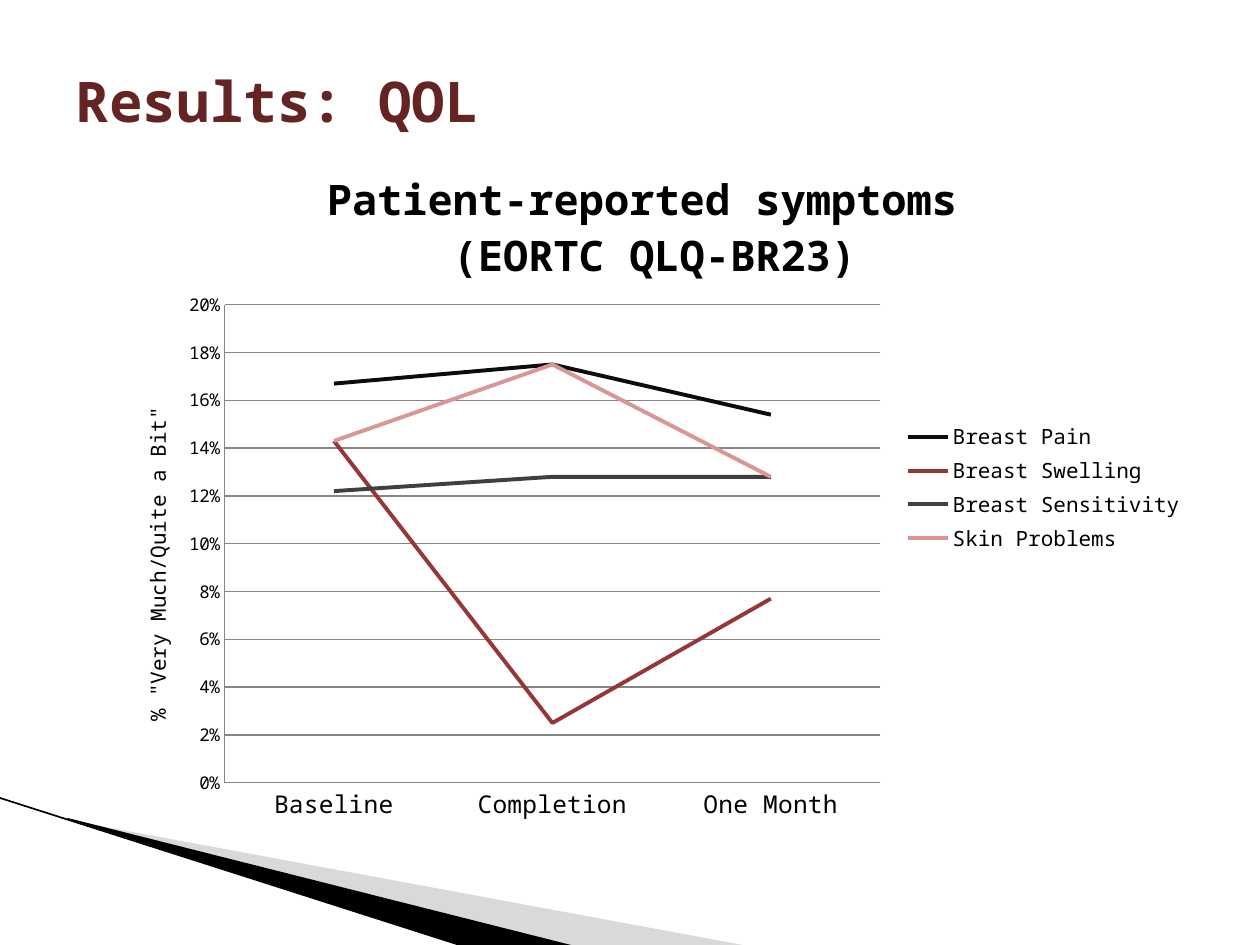
import dataclasses
import pptx
import pptx.chart.data
import pptx.dml.color
import pptx.enum.chart
import pptx.enum.shapes
import pptx.enum.text
import pptx.oxml.ns
import pptx.oxml.xmlchemy
import pptx.util

Inches = pptx.util.Inches
Pt = pptx.util.Pt
qn = pptx.oxml.ns.qn
make = pptx.oxml.xmlchemy.OxmlElement
FONT = "Noto Sans Mono"


@dataclasses.dataclass
class Wedge:
    points: list[tuple[float, float]]
    color: str
    alpha: int = 100


@dataclasses.dataclass
class Trend:
    name: str
    color: str
    vals: tuple[float, ...]


WEDGES = [
    Wedge([(0.55, 6.51), (5.95, 7.51), (4.56, 7.51), (0.55, 6.5)], "A2A2A2", 40),
    Wedge([(0.53, 6.49), (4.57, 7.51), (3.72, 7.52), (0.54, 6.5)], "000000"),
]
CATS = ["Baseline", "Completion", "One Month"]
TRENDS = [
    Trend("Breast Pain", "0C0C0C", (0.167, 0.175, 0.154)),
    Trend("Breast Swelling", "953734", (0.143, 0.025, 0.077)),
    Trend("Breast Sensitivity", "3F3F3F", (0.122, 0.128, 0.128)),
    Trend("Skin Problems", "D99694", (0.143, 0.175, 0.128)),
]


def rgb(code: str):
    return pptx.dml.color.RGBColor.from_string(code)


def style(font, size: float, color: str = "000000", bold: bool = False) -> None:
    for key, val in {"name": FONT, "size": Pt(size), "bold": bold}.items():
        setattr(font, key, val)
    font.color.rgb = rgb(color)


def stroke(line, color: str, width: float) -> None:
    line.color.rgb = rgb(color)
    line.width = Pt(width)


def draw_wedge(slide, wedge: Wedge) -> None:
    first, *rest = [(Inches(x), Inches(y)) for x, y in wedge.points]
    pen = slide.shapes.build_freeform(*first)
    pen.add_line_segments(rest, close=True)
    shape = pen.convert_to_shape()
    shape.shadow.inherit = False
    shape.fill.solid()
    shape.fill.fore_color.rgb = rgb(wedge.color)
    shape.line.fill.background()
    if wedge.alpha < 100:
        tint = shape._element.spPr.find(".//" + qn("a:srgbClr"))
        alpha = make("a:alpha")
        alpha.set("val", str(wedge.alpha * 1000))
        tint.append(alpha)


def place(owner, **spots: float) -> None:
    """Set a manual layout, in fractions of the chart, on a chart part."""
    for old in owner.findall(qn("c:layout")):
        owner.remove(old)
    layout = make("c:layout")
    manual = make("c:manualLayout")
    layout.append(manual)
    items = [("xMode", "edge"), ("yMode", "edge"), *spots.items()]
    if "w" in spots:
        items.insert(0, ("layoutTarget", "inner"))
    for tag, val in items:
        node = make("c:" + tag)
        node.set("val", str(val))
        manual.append(node)
    owner.insert(0 if owner.find(qn("c:tx")) is None else 1, layout)


def write(title, lines: list[str], size: float, bold: bool) -> None:
    frame = title.text_frame
    for i, text in enumerate(lines):
        para = frame.add_paragraph() if i else frame.paragraphs[0]
        run = para.add_run()
        run.text = text
        style(run.font, size, bold=bold)


def draw_chart(slide) -> None:
    data = pptx.chart.data.CategoryChartData(number_format="0.0%")
    data.categories = CATS
    for trend in TRENDS:
        data.add_series(trend.name, trend.vals)
    chart = slide.shapes.add_chart(
        pptx.enum.chart.XL_CHART_TYPE.LINE, Inches(0.83), Inches(1.08),
        Inches(8.67), Inches(5.58), data).chart
    style(chart.font, 10)

    # Heading and legend
    chart.has_title = True
    write(chart.chart_title, ["Patient-reported symptoms ", "(EORTC QLQ-BR23)"], 24, True)
    place(chart.chart_title._element, x=0.2, y=0.04)
    chart.has_legend = True
    chart.legend.position = pptx.enum.chart.XL_LEGEND_POSITION.RIGHT
    chart.legend.include_in_layout = False
    style(chart.legend.font, 12)

    # Axes
    side, base = chart.value_axis, chart.category_axis
    for axis, size in ((side, 10), (base, 14)):
        axis.major_tick_mark = pptx.enum.chart.XL_TICK_MARK.NONE
        axis.minor_tick_mark = pptx.enum.chart.XL_TICK_MARK.NONE
        style(axis.tick_labels.font, size)
        stroke(axis.format.line, "868686", 0.75)
    scale = {"minimum_scale": 0, "maximum_scale": 0.2, "major_unit": 0.02,
             "has_major_gridlines": True, "has_title": True}
    for key, val in scale.items():
        setattr(side, key, val)
    stroke(side.major_gridlines.format.line, "868686", 0.75)
    side.tick_labels.number_format = "0%"
    side.tick_labels.number_format_is_linked = False
    write(side.axis_title, ['% "Very Much/Quite a Bit"'], 12, False)
    side.axis_title.text_frame._txBody.bodyPr.set("rot", "-5400000")
    place(side.axis_title._element, x=0.03, y=0.38)

    # Lines
    plot = chart.plots[0]
    plot.vary_by_categories = False
    for line, trend in zip(plot.series, TRENDS):
        line.smooth = False
        line.marker.style = pptx.enum.chart.XL_MARKER_STYLE.NONE
        stroke(line.format.line, trend.color, 2.25)
    place(chart._chartSpace.chart.plotArea, x=0.11, y=0.24, w=0.6, h=0.68)


def main() -> None:
    deck = pptx.Presentation()
    deck.slide_width, deck.slide_height = Inches(10), Inches(7.5)
    slide = deck.slides.add_slide(deck.slide_layouts[5])

    # Corner decoration
    for wedge in WEDGES:
        draw_wedge(slide, wedge)
    edge = slide.shapes.add_connector(
        pptx.enum.shapes.MSO_CONNECTOR.STRAIGHT,
        Inches(-0.01), Inches(6.33), Inches(3.71), Inches(7.52))
    stroke(edge.line, "000000", 0.95)
    edge._element.spPr.append(make("a:effectLst"))

    # Title
    title = slide.shapes.title
    spot = {"left": 0.5, "top": 0.17, "width": 9, "height": 1.25}
    for key, val in spot.items():
        setattr(title, key, Inches(val))
    title.text_frame.vertical_anchor = pptx.enum.text.MSO_ANCHOR.MIDDLE
    para = title.text_frame.paragraphs[0]
    para.alignment = pptx.enum.text.PP_ALIGN.LEFT
    run = para.add_run()
    run.text = "Results: QOL"
    style(run.font, 32, "632423", True)

    draw_chart(slide)
    deck.save("out.pptx")


if __name__ == "__main__":
    main()
